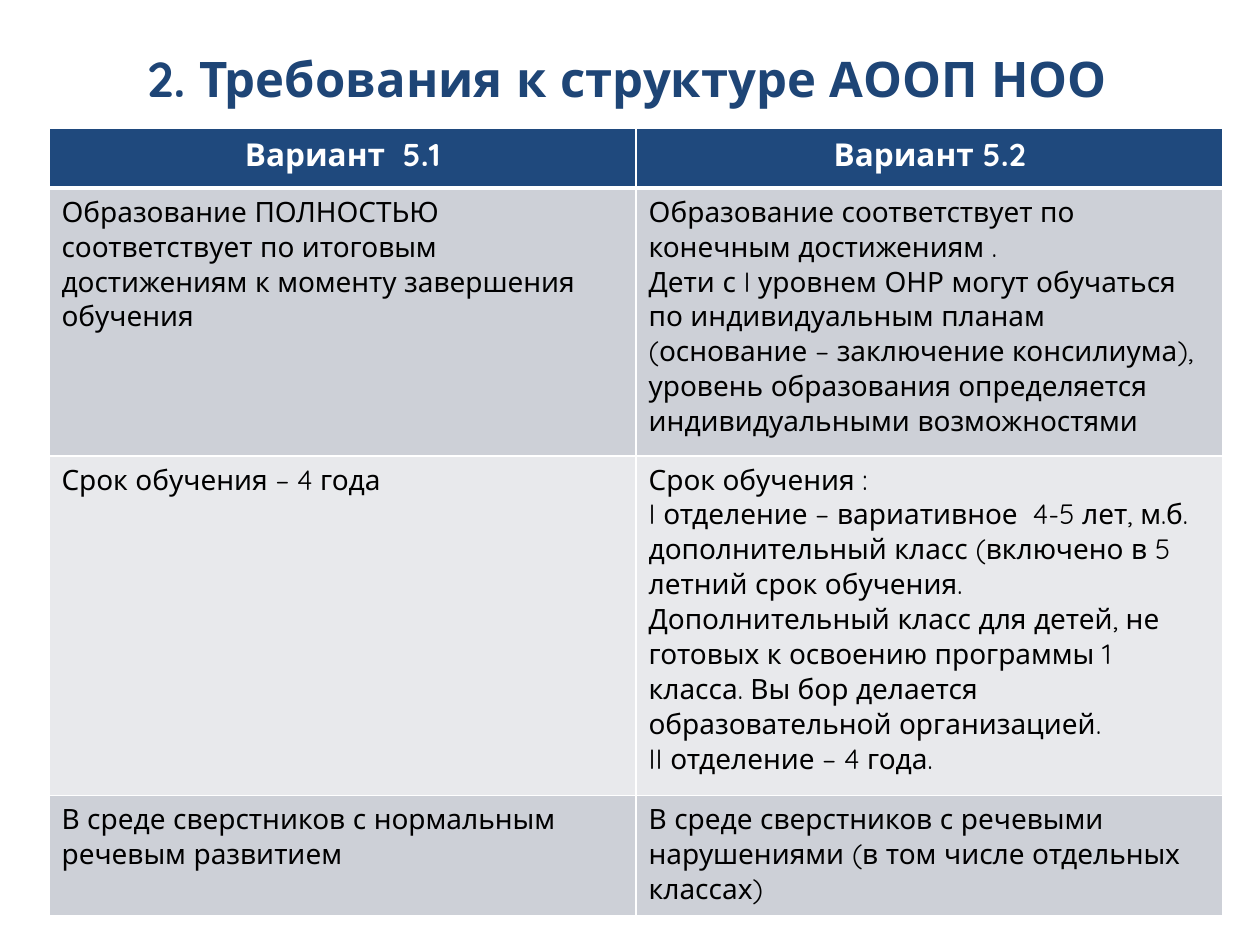
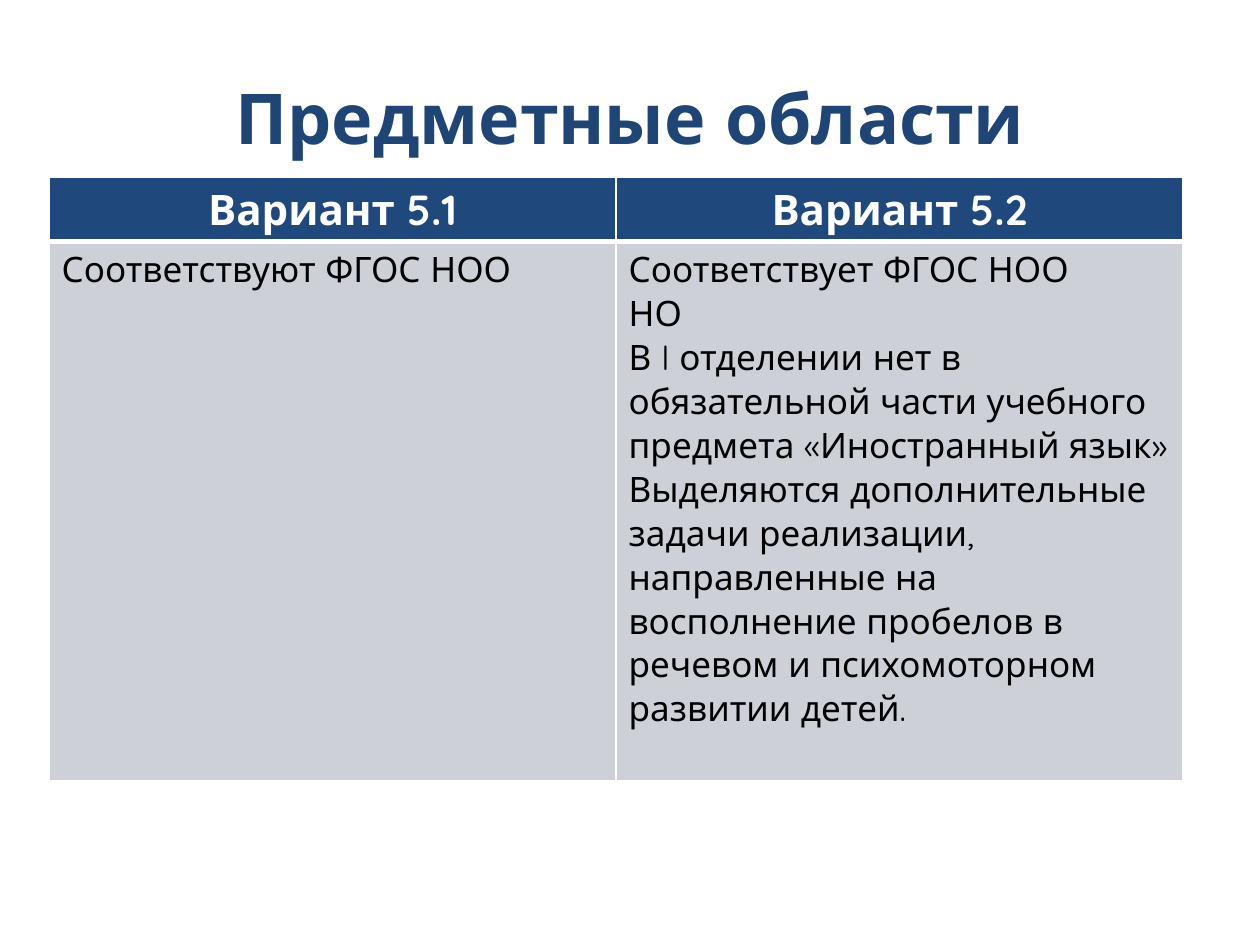
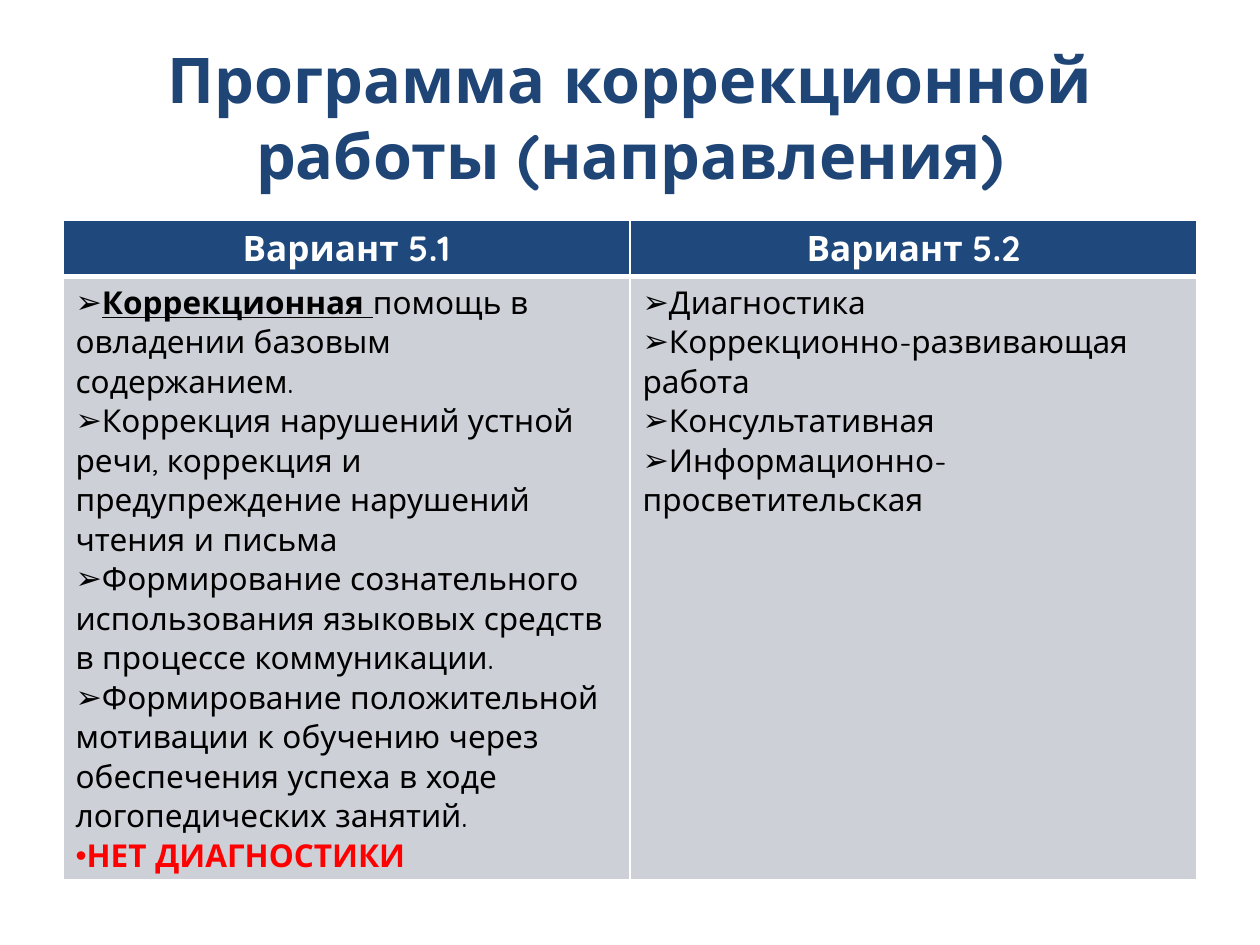
from dataclasses import dataclass

from lxml.etree import SubElement
from pptx import Presentation
from pptx.dml.color import RGBColor
from pptx.enum.text import MSO_ANCHOR, PP_ALIGN
from pptx.oxml.ns import qn
from pptx.util import Pt

FONT = "Quicksand"
TITLE_BLUE, HEADER_BLUE = "1E4576", "1F497D"
WHITE, BLACK, RED = "FFFFFF", "000000", "FF0000"
BANDS = ("CDD0D7", "E8E9EC")
ARROW, DOT = "➢", "•"


@dataclass
class Line:
    """One paragraph of a table cell."""
    text: str
    bullet: str = ""
    lead: str = ""
    color: str = BLACK
    bold: bool = False
    centered: bool = False


def rgb(color):
    """Turn a hex string into a colour."""
    return RGBColor.from_string(color)


def style_font(font, size, color, bold):
    """Set the shared typeface with a size, colour and weight."""
    font.name = FONT
    font.size = Pt(size)
    font.bold = bold
    font.color.rgb = rgb(color)


def add_bullet(paragraph, character):
    """Give a paragraph an inline bullet without a hanging indent."""
    properties = paragraph._p.get_or_add_pPr()
    properties.set("marL", "0")
    properties.set("indent", "0")
    SubElement(properties, qn("a:buFont"), typeface="Arial")
    SubElement(properties, qn("a:buChar"), char=character)


def set_borders(cell, bottom_width):
    """Draw white cell borders, with the bottom one at its own width."""
    properties = cell._tc.get_or_add_tcPr()
    for side, width in (("L", 1), ("R", 1), ("T", 1), ("B", bottom_width)):
        line = SubElement(properties, qn(f"a:ln{side}"), w=str(Pt(width)))
        fill = SubElement(line, qn("a:solidFill"))
        SubElement(fill, qn("a:srgbClr"), val=WHITE)


def fill_cell(cell, lines, size, background, bottom_width=1):
    """Fill one table cell with its background, borders and paragraphs."""
    set_borders(cell, bottom_width)
    cell.fill.solid()
    cell.fill.fore_color.rgb = rgb(background)
    frame = cell.text_frame
    for index, line in enumerate(lines):
        paragraph = frame.add_paragraph() if index else frame.paragraphs[0]
        paragraph.alignment = PP_ALIGN.CENTER if line.centered else PP_ALIGN.LEFT
        if line.bullet:
            add_bullet(paragraph, line.bullet)
        style_font(paragraph.font, size, line.color, line.bold)
        if line.lead:
            lead = paragraph.add_run()
            lead.text = line.lead
            lead.font.bold = lead.font.underline = True
        paragraph.add_run().text = line.text


def add_title(slide, box, text, size):
    """Add the centred slide title in its box."""
    frame = slide.shapes.add_textbox(*map(Pt, box)).text_frame
    frame.word_wrap = True
    frame.vertical_anchor = MSO_ANCHOR.MIDDLE
    paragraph = frame.paragraphs[0]
    paragraph.alignment = PP_ALIGN.CENTER
    style_font(paragraph.font, size, TITLE_BLUE, True)
    paragraph.add_run().text = text


def add_comparison(slide, position, width, heights, headers, rows, header_size, body_size):
    """Add the table that compares the two variants."""
    left, top = position
    shape = slide.shapes.add_table(
        len(heights), len(headers), Pt(left), Pt(top), Pt(width), Pt(sum(heights)))
    table = shape.table
    table.horz_banding = False
    for column in table.columns:
        column.width = Pt(width / len(headers))
    for row, height in zip(table.rows, heights):
        row.height = Pt(height)
    for cell, header in zip(table.rows[0].cells, headers):
        line = Line(header, color=WHITE, bold=True, centered=True)
        fill_cell(cell, [line], header_size, HEADER_BLUE, 3)
    for index, row in enumerate(rows):
        for cell, lines in zip(table.rows[index + 1].cells, row):
            fill_cell(cell, lines, body_size, BANDS[index % 2])


def add_comparison_slide(presentation, title, title_size, title_box, **table):
    """Add a slide with a title above a comparison table."""
    slide = presentation.slides.add_slide(presentation.slide_layouts[6])
    add_title(slide, title_box, title, title_size)
    add_comparison(slide, **table)


def plain(*texts):
    """Make paragraphs without bullets."""
    return [Line(text) for text in texts]


def arrows(*texts):
    """Make paragraphs with arrow bullets."""
    return [Line(text, ARROW) for text in texts]


def main():
    """Build and save the presentation."""
    presentation = Presentation()
    presentation.slide_width, presentation.slide_height = Pt(720), Pt(540)
    headers = ("Вариант 5.1", "Вариант 5.2")
    title_box = (36, 21.6, 648, 90)

    structure_rows = [
        (plain("Образование ПОЛНОСТЬЮ соответствует по итоговым достижениям "
               "к моменту завершения обучения"),
         plain("Образование соответствует по конечным достижениям .",
               "Дети с I уровнем ОНР могут обучаться по индивидуальным планам "
               "(основание – заключение консилиума), уровень образования "
               "определяется индивидуальными возможностями")),
        (plain("Срок обучения – 4 года"),
         plain("Срок обучения :",
               "I отделение – вариативное  4-5 лет, м.б. дополнительный класс "
               "(включено в 5 летний срок обучения.",
               "Дополнительный класс для детей, не готовых к освоению программы "
               "1 класса. Вы бор делается образовательной организацией.",
               "II отделение – 4 года.")),
        (plain("В среде сверстников с нормальным речевым развитием"),
         plain("В среде сверстников с речевыми нарушениями "
               "(в том числе отдельных классах)")),
    ]
    add_comparison_slide(
        presentation, "2. Требования к структуре АООП НОО", 28, (36, 21.6, 644.4, 46),
        position=(28, 73.5), width=671, heights=(34, 153, 194, 69),
        headers=("Вариант  5.1", "Вариант 5.2"), rows=structure_rows,
        header_size=18, body_size=16)

    subject_rows = [
        (plain("Соответствуют ФГОС НОО"),
         plain("Соответствует ФГОС НОО",
               "НО",
               "В I отделении нет в обязательной части учебного предмета "
               "«Иностранный язык»",
               "Выделяются дополнительные задачи реализации, направленные на "
               "восполнение пробелов в речевом и психомоторном развитии детей.")),
    ]
    add_comparison_slide(
        presentation, "Предметные области", 40, title_box,
        position=(28, 101.5), width=648, heights=(36.5, 308), headers=headers,
        rows=subject_rows, header_size=24, body_size=20)

    correction_rows = [
        ([Line("помощь в овладении базовым содержанием.", ARROW, "Коррекционная "),
          *arrows("Коррекция нарушений устной речи, коррекция и предупреждение "
                  "нарушений чтения и письма",
                  "Формирование сознательного использования языковых средств "
                  "в процессе коммуникации.",
                  "Формирование положительной мотивации к обучению через "
                  "обеспечения успеха в ходе логопедических занятий."),
          Line("НЕТ ДИАГНОСТИКИ", DOT, color=RED, bold=True)],
         arrows("Диагностика", "Коррекционно-развивающая работа",
                "Консультативная", "Информационно-просветительская")),
    ]
    add_comparison_slide(
        presentation, "Программа коррекционной работы (направления)", 36, title_box,
        position=(36, 126), width=648, heights=(32, 345), headers=headers,
        rows=correction_rows, header_size=20, body_size=18)

    presentation.save("out.pptx")


if __name__ == "__main__":
    main()
